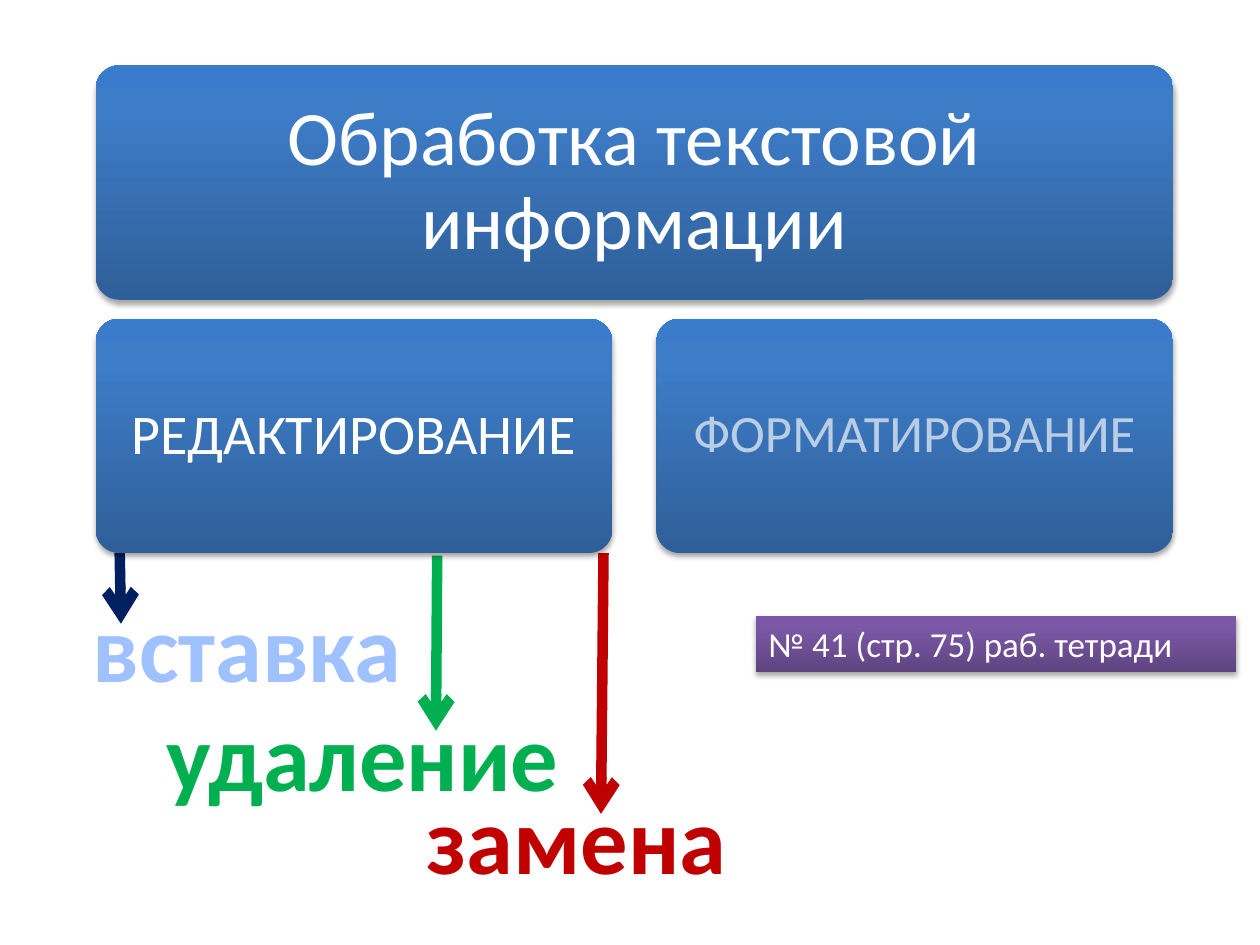
"""Build a slide charting text processing: editing, its three operations, and formatting."""
from copy import deepcopy

from lxml import etree
from pptx import Presentation
from pptx import util as u
from pptx.dml.color import RGBColor
from pptx.enum import shapes, text
from pptx.oxml.ns import qn

WHITE = RGBColor(0xFF, 0xFF, 0xFF)
PALE = RGBColor(0xB9, 0xCD, 0xE5)
NAVY = RGBColor(0x00, 0x20, 0x60)
SKY = RGBColor(0xA0, 0xC1, 0xFF)
GREEN = RGBColor(0x00, 0xB0, 0x50)
RED = RGBColor(0xC0, 0x00, 0x00)
BLUES = [RGBColor(0x2F, 0x5F, 0x99), RGBColor(0x3D, 0x7C, 0xC7), RGBColor(0x3A, 0x7C, 0xCB)]
PURPLES = [RGBColor(0x5F, 0x44, 0x80), RGBColor(0x7B, 0x58, 0xA6), RGBColor(0x7C, 0x57, 0xA8)]

prs = Presentation()
prs.slide_width, prs.slide_height = u.Inches(10), u.Inches(7.5)
s = prs.slides.add_slide(prs.slide_layouts[6])
COL, ROW = prs.slide_width / 100, prs.slide_height / 100


def add_panel(kind, x, y, w, h, colors):
    sp = s.shapes.add_shape(kind, int(x * COL), int(y * ROW), int(w * COL), int(h * ROW))
    sp.line.fill.background()
    sp.fill.gradient()
    sp.fill.gradient_angle = 90
    stops = sp._element.spPr.find(".//" + qn("a:gsLst"))
    stops.insert(1, deepcopy(stops[0]))
    for stop, position, color in zip(sp.fill.gradient_stops, (0, 0.8, 1), colors):
        stop.position, stop.color.rgb = position, color
    sp.shadow.inherit = False
    shadow = etree.SubElement(sp._element.spPr.find(qn("a:effectLst")), qn("a:outerShdw"),
                              blurRad=str(u.Pt(3.1)), dist=str(u.Pt(1.8)), dir="5400000", rotWithShape="0")
    black = etree.SubElement(shadow, qn("a:srgbClr"), val="000000")
    etree.SubElement(black, qn("a:alpha"), val="35000")
    return sp


def write(sp, words, size, color, align, bold=False):
    tf = sp.text_frame
    tf.text = words
    p = tf.paragraphs[0]
    p.alignment = align
    font = p.runs[0].font
    font.name, font.size, font.bold, font.color.rgb = "Calibri", u.Pt(size), bold, color
    return tf


LEFT, TOP, BOX_W, BOX_H = 7.6, 6.93, 41, 24.8
COL_STEP, ROW_STEP = 44.5, 26.8
BOTTOM = TOP + ROW_STEP + BOX_H

boxes = [
    ("Обработка текстовой информации", 0, 0, COL_STEP + BOX_W, 44, WHITE),
    ("РЕДАКТИРОВАНИЕ", 0, 1, BOX_W, 32, WHITE),
    ("ФОРМАТИРОВАНИЕ", 1, 1, BOX_W, 30, PALE),
]
arrows = [
    (47.9, BOTTOM, 47.7, 86.13, RED),
    (34.7, 58.8, 34.6, 77.33, GREEN),
    (9.5, BOTTOM, 9.6, 66, NAVY),
]
operations = [
    ("вставка", 6.2, 61.6, 26.8, SKY),
    ("удаление", 12.1, 73.07, 33.4, GREEN),
    ("замена", 32.7, 81.87, 26.1, RED),
]

for x1, y1, x2, y2, color in arrows:
    line = s.shapes.add_connector(shapes.MSO_CONNECTOR.STRAIGHT, int(x1 * COL), int(y1 * ROW),
                                  int(x2 * COL), int(y2 * ROW))
    line.line.width = u.Pt(6)
    line.line.color.rgb = color
    spPr = line._element.spPr
    etree.SubElement(spPr.find(qn("a:ln")), qn("a:tailEnd"), type="arrow")
    etree.SubElement(spPr, qn("a:effectLst"))

for words, col, row, w, size, color in boxes:
    sp = add_panel(shapes.MSO_SHAPE.ROUNDED_RECTANGLE, LEFT + col * COL_STEP, TOP + row * ROW_STEP,
                   w, BOX_H, BLUES)
    sp.adjustments[0] = 0.1
    tf = write(sp, words, size, color, text.PP_ALIGN.CENTER)
    tf.margin_left = tf.margin_right = tf.margin_top = tf.margin_bottom = u.Inches(0.18)
    tf.vertical_anchor = text.MSO_ANCHOR.MIDDLE
    tf.paragraphs[0].line_spacing = 0.9

for words, x, y, w, color in operations:
    sp = s.shapes.add_textbox(int(x * COL), int(y * ROW), int(w * COL), int(13.47 * ROW))
    tf = write(sp, words, 54, color, text.PP_ALIGN.CENTER, bold=True)
    tf.word_wrap = False
    tf.auto_size = text.MSO_AUTO_SIZE.SHAPE_TO_FIT_TEXT

sp = add_panel(shapes.MSO_SHAPE.RECTANGLE, 60, 65.2, 38.1, 5.87, PURPLES)
tf = write(sp, "№ 41 (стр. 75) раб. тетради", 20, WHITE, text.PP_ALIGN.LEFT)
tf.vertical_anchor = text.MSO_ANCHOR.TOP
tf.word_wrap = True

prs.save("out.pptx")
